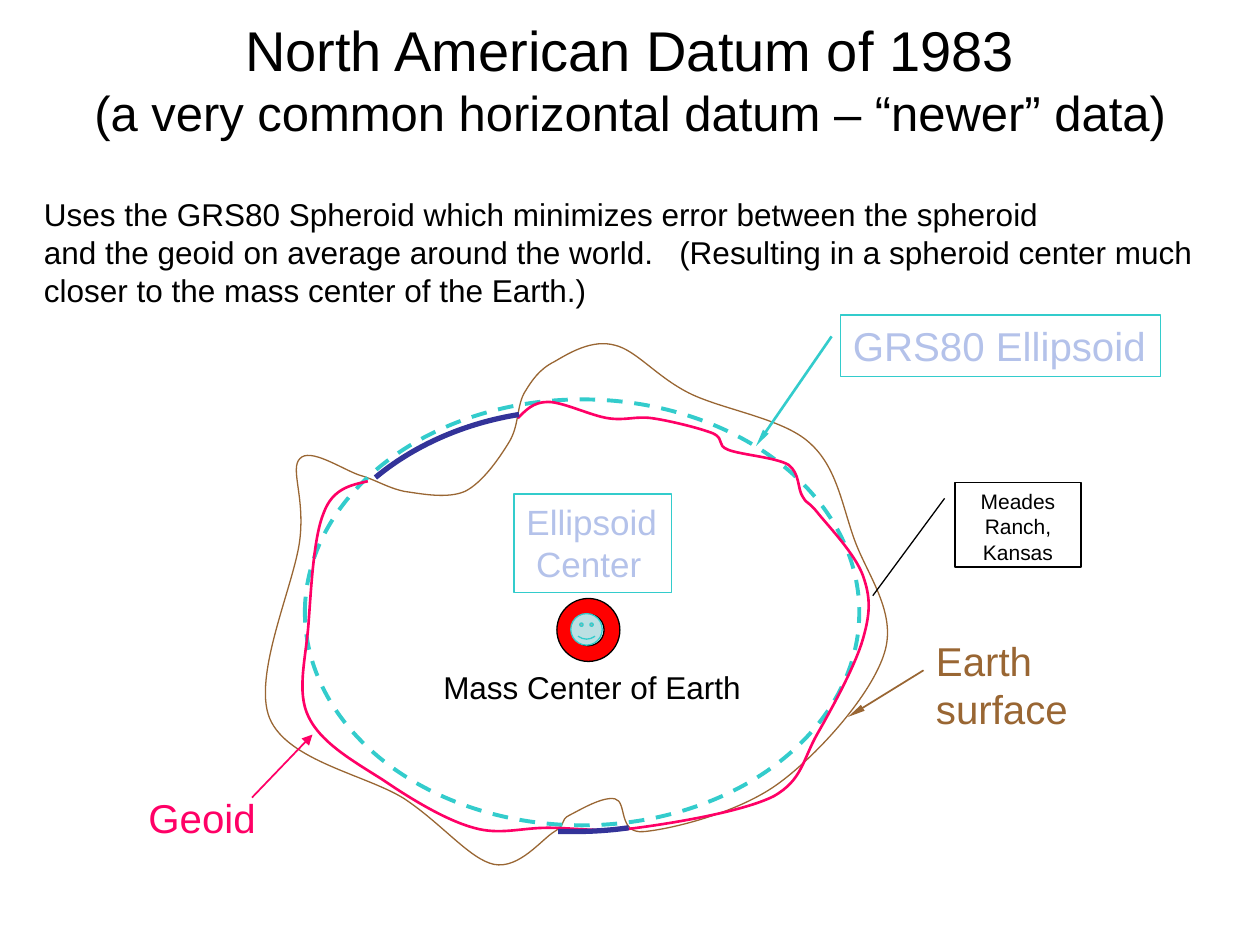
from lxml.etree import SubElement
from pptx import Presentation
from pptx.dml.color import RGBColor
from pptx.enum.dml import MSO_LINE
from pptx.enum.shapes import MSO_CONNECTOR, MSO_SHAPE
from pptx.enum.text import MSO_ANCHOR, MSO_AUTO_SIZE, PP_ALIGN
from pptx.oxml.ns import qn
from pptx.util import Inches, Pt

FONT = "Arial"
BLACK, RED, TEAL, BROWN = "000000", "FF0000", "33CCCC", "996633"
PINK, NAVY, LAVENDER, PALE = "FF0066", "333399", "B4C2EA", "BBE0E3"
UNITS = 100  # curve grid steps per inch

# Content
TITLE = [("North American Datum of 1983", 32),
         ("(a very common horizontal datum – “newer” data)", 28)]
INTRO = ["Uses the GRS80 Spheroid which minimizes error between the spheroid",
         "and the geoid on average around the world.   (Resulting in a spheroid "
         "center much closer to the mass center of the Earth.)"]

# Curves: a start point, then two control points and an end point per segment
EARTH_SURFACE = [
    (2.85, 3.77),
    (2.99, 3.81), (3.07, 3.87), (3.21, 3.9), (3.35, 3.92), (3.55, 3.96), (3.69, 3.9),
    (3.83, 3.83), (3.96, 3.64), (4.04, 3.51), (4.12, 3.38), (4.1, 3.23), (4.16, 3.12),
    (4.22, 3.02), (4.28, 2.93), (4.4, 2.87), (4.52, 2.8), (4.7, 2.69), (4.88, 2.74),
    (5.05, 2.78), (5.21, 2.99), (5.47, 3.12), (5.73, 3.25), (6.21, 3.32), (6.42, 3.51),
    (6.64, 3.7), (6.68, 4), (6.78, 4.28), (6.88, 4.56), (7.12, 4.86), (7.02, 5.18),
    (6.92, 5.51), (6.5, 5.98), (6.19, 6.21), (5.87, 6.45), (5.33, 6.58), (5.11, 6.6),
    (4.9, 6.62), (4.98, 6.36), (4.88, 6.34), (4.78, 6.32), (4.6, 6.43), (4.52, 6.47),
    (4.44, 6.51), (4.5, 6.54), (4.4, 6.6), (4.3, 6.66), (4.12, 6.9), (3.92, 6.86),
    (3.73, 6.82), (3.51, 6.54), (3.21, 6.34), (2.91, 6.15), (2.28, 6.04), (2.14, 5.7),
    (2, 5.36), (2.34, 4.63), (2.38, 4.28), (2.42, 3.94), (2.3, 3.72), (2.38, 3.64),
    (2.46, 3.55), (2.71, 3.72), (2.85, 3.77)]
GEOID = [
    (4.11, 3.32),
    (4.17, 3.26), (4.23, 3.19), (4.35, 3.19), (4.47, 3.19), (4.69, 3.3), (4.83, 3.32),
    (4.97, 3.34), (5.05, 3.3), (5.18, 3.32), (5.32, 3.34), (5.56, 3.4), (5.66, 3.44),
    (5.76, 3.49), (5.68, 3.53), (5.78, 3.57), (5.88, 3.61), (6.16, 3.63), (6.26, 3.69),
    (6.35, 3.76), (6.33, 3.88), (6.37, 3.94), (6.41, 4.01), (6.41, 3.97), (6.49, 4.07),
    (6.57, 4.17), (6.79, 4.4), (6.85, 4.57), (6.91, 4.74), (6.91, 4.86), (6.85, 5.07),
    (6.79, 5.28), (6.61, 5.61), (6.49, 5.82), (6.37, 6.03), (6.37, 6.19), (6.14, 6.32),
    (5.9, 6.44), (5.36, 6.53), (5.06, 6.57), (4.77, 6.61), (4.57, 6.57), (4.35, 6.57),
    (4.13, 6.57), (3.97, 6.63), (3.76, 6.57), (3.54, 6.51), (3.26, 6.34), (3.04, 6.19),
    (2.82, 6.05), (2.55, 5.9), (2.45, 5.69), (2.35, 5.49), (2.43, 5.22), (2.45, 4.94),
    (2.47, 4.67), (2.49, 4.26), (2.57, 4.07), (2.64, 3.88), (2.78, 3.85), (2.92, 3.82)]
UPPER_ARC = [(2.98, 3.79), (3.28, 3.54), (3.68, 3.36), (4.12, 3.29)]
LOWER_ARC = [(4.99, 6.57), (4.85, 6.59), (4.7, 6.6), (4.56, 6.6),
             (4.51, 6.6), (4.47, 6.6), (4.43, 6.6)]

deck = Presentation()
deck.slide_width, deck.slide_height = Inches(10), Inches(7.5)
page = deck.slides.add_slide(deck.slide_layouts[5])


def color(value):
    return RGBColor.from_string(value)


def style_line(line, value, width):
    line.color.rgb = color(value)
    line.width = Pt(width)


def paint(shape, line, width, fill=None):
    shape.shadow.inherit = False
    if fill:
        shape.fill.solid()
        shape.fill.fore_color.rgb = color(fill)
    else:
        shape.fill.background()
    style_line(shape.line, line, width)


def add_preset(kind, place, line, width, fill=None, adjust=()):
    shape = page.shapes.add_shape(kind, *map(Inches, place))
    paint(shape, line, width, fill)
    for index, value in enumerate(adjust):
        shape.adjustments[index] = value
    return shape


def add_curve(points, line, width, close=False):
    grid = [(round(x * UNITS), round(y * UNITS)) for x, y in points]
    builder = page.shapes.build_freeform(*grid[0], scale=Inches(1) / UNITS)
    builder.add_line_segments(grid[1:], close=close)
    shape = builder.convert_to_shape()
    paint(shape, line, width)
    # Join every three straight segments into one cubic segment
    steps = list(shape.element.iter(qn("a:lnTo")))
    for first, second, third in zip(steps[::3], steps[1::3], steps[2::3]):
        first.tag = qn("a:cubicBezTo")
        for step in (second, third):
            first.append(step[0])
            step.getparent().remove(step)


def add_arrow(start, end, value, width, size="med", length="med"):
    arrow = page.shapes.add_connector(
        MSO_CONNECTOR.STRAIGHT, *map(Inches, start + end))
    style_line(arrow.line, value, width)
    properties = arrow.element.spPr
    SubElement(properties.find(qn("a:ln")), qn("a:tailEnd"),
               type="triangle", w=size, len=length)
    SubElement(properties, qn("a:effectLst"))


def write(box, lines, size, value, align=PP_ALIGN.LEFT, wrap=False, grow=True):
    frame = box.text_frame
    frame.text = "\n".join(lines)
    frame.word_wrap = wrap
    frame.auto_size = MSO_AUTO_SIZE.SHAPE_TO_FIT_TEXT if grow else MSO_AUTO_SIZE.NONE
    frame.vertical_anchor = MSO_ANCHOR.TOP
    for para in frame.paragraphs:
        para.alignment = align
        for span in para.runs:
            span.font.name, span.font.size = FONT, Pt(size)
            span.font.color.rgb = color(value)


def add_label(place, lines, size, value, wrap=False):
    box = page.shapes.add_textbox(*map(Inches, place))
    write(box, lines, size, value, wrap=wrap)
    return box


# Title
title = page.shapes.title
title.left, title.top, title.width, title.height = map(Inches, (0.5, 0, 9, 1.25))
title.text_frame.text = "\v".join(text for text, _ in TITLE)
title.text_frame.auto_size = MSO_AUTO_SIZE.NONE
title.text_frame.vertical_anchor = MSO_ANCHOR.MIDDLE
heading = title.text_frame.paragraphs[0]
heading.alignment = PP_ALIGN.CENTER
for span, (_, size) in zip(heading.runs, TITLE):
    span.font.name, span.font.size = FONT, Pt(size)
    span.font.color.rgb = color(BLACK)

# Earth surface, ellipsoid and geoid
add_curve(EARTH_SURFACE, BROWN, 0.75, close=True)
ellipsoid = add_preset(MSO_SHAPE.OVAL, (2.42, 3.17, 4.4, 3.38), TEAL, 2.25)
ellipsoid.line.dash_style = MSO_LINE.DASH
add_arrow((6.6, 2.67), (6, 3.54), TEAL, 1.5, "sm", "lg")
add_arrow((7.33, 5.32), (6.73, 5.69), BROWN, 1, "sm", "lg")
add_curve(GEOID, PINK, 1.5)
for arc in (UPPER_ARC, LOWER_ARC):
    add_curve(arc, NAVY, 3)
add_arrow((2, 6.33), (2.48, 5.83), PINK, 1)

# Labels around the figure
ellipsoid_label = add_preset(MSO_SHAPE.RECTANGLE, (6.67, 2.5, 2.54, 0.49), TEAL, 0.75)
write(ellipsoid_label, ["GRS80 Ellipsoid"], 23, LAVENDER)
add_label((1.08, 6.25, 1.1, 0.48), ["Geoid"], 23, PINK)
surface_label = add_label((7.33, 5, 2.1, 0.48), ["Earth surface"], 23, BROWN, wrap=True)
surface_label.text_frame.margin_right = Inches(0.6)
ranch = add_preset(MSO_SHAPE.LINE_CALLOUT_1, (7.58, 3.83, 1, 0.67), BLACK, 0.75,
                   adjust=(0.188, -0.083, 1.341, -0.653))
write(ranch, ["Meades Ranch, Kansas"], 12, BLACK, PP_ALIGN.CENTER, wrap=True, grow=False)

# Centers
add_preset(MSO_SHAPE.DONUT, (4.42, 4.75, 0.5, 0.5), BLACK, 0.75, RED, (0.25,))
add_preset(MSO_SHAPE.SMILEY_FACE, (4.53, 4.87, 0.25, 0.25), TEAL, 0.75, PALE, (0.047,))
center_label = add_preset(MSO_SHAPE.RECTANGLE, (4.08, 3.92, 1.25, 0.78), TEAL, 0.75)
write(center_label, ["Ellipsoid", " Center"], 20, LAVENDER)
add_label((3.42, 5.25, 2.56, 0.4), ["Mass Center of Earth"], 18, BLACK)

# Introduction
add_label((0.25, 1.5, 9.42, 1), INTRO, 18, BLACK, wrap=True)

deck.save("out.pptx")
